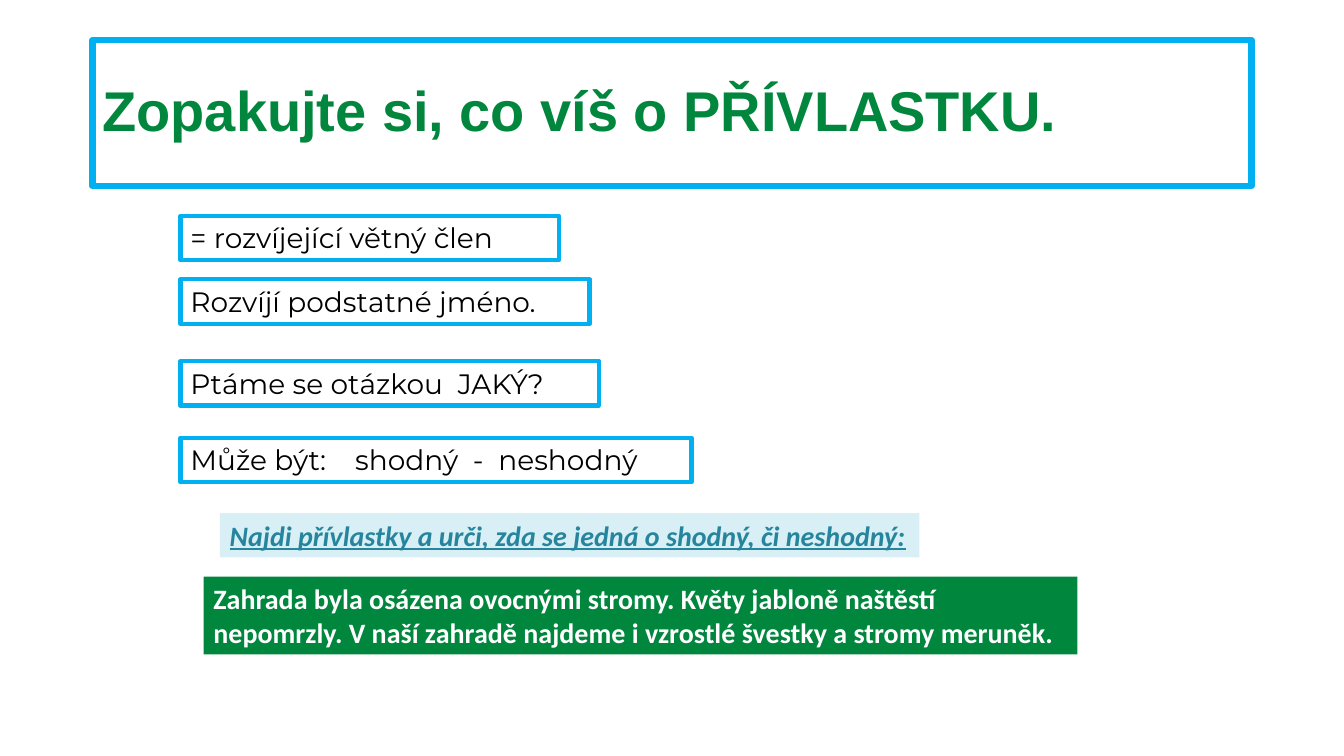
import pptx
import pptx.dml.color
import pptx.enum.text
import pptx.oxml
import pptx.oxml.ns
import pptx.util

Cm = pptx.util.Cm
Pt = pptx.util.Pt
SKY, GREEN, WHITE, BLACK = "00B0F0", "00863D", "FFFFFF", "000000"
PALE, TEAL = "D7EFF5", "26859D"


def tint(hue):
    return pptx.dml.color.RGBColor.from_string(hue)


def frame(shape, width):
    shape.line.color.rgb = tint(SKY)
    shape.line.width = Pt(width)


def style(para, face, size, hue, bold=False, slant=False):
    """Format every run; slanted text is underlined too."""
    for run in para.runs:
        font = run.font
        font.name, font.size, font.bold = face, Pt(size), bold
        font.color.rgb = tint(hue)
        if slant:
            font.italic = font.underline = True


def set_tab(para, place):
    """Add one left tab stop at the given distance."""
    props = para._p.get_or_add_pPr()
    stops = pptx.oxml.parse_xml(f"<a:tabLst {pptx.oxml.ns.nsdecls('a')}/>")
    stop = stops.makeelement(pptx.oxml.ns.qn("a:tab"), {"pos": str(int(place)), "algn": "l"})
    stops.append(stop)
    props.append(stops)


def add_title(slide, left, top, width, height):
    title = slide.shapes.title
    title.left, title.top, title.width, title.height = left, top, width, height
    frame(title, 4.5)
    text = title.text_frame
    text.text = "Zopakujte si, co víš o PŘÍVLASTKU."
    text.vertical_anchor = pptx.enum.text.MSO_ANCHOR.MIDDLE
    para = text.paragraphs[0]
    para.alignment = pptx.enum.text.PP_ALIGN.LEFT
    para.line_spacing = 0.9
    style(para, "Arial", 40, GREEN, bold=True)


def add_box(slide, words, left, top, width, height, wrap=False):
    box = slide.shapes.add_textbox(left, top, width, height)
    text = box.text_frame
    text.text = words
    text.word_wrap = wrap
    text.auto_size = pptx.enum.text.MSO_AUTO_SIZE.SHAPE_TO_FIT_TEXT
    return box, text.paragraphs[0]


def add_facts(slide, left, top, height):
    facts = [
        ("= rozvíjející větný člen", 0, 9.53),
        ("Rozvíjí podstatné jméno.", 1.6, 10.31),
        ("Ptáme se otázkou  JAKÝ?", 3.66, 10.54),
        ("Může být:\tshodný  -  neshodný", 5.59, 12.88),
    ]
    for words, drop, width in facts:
        box, para = add_box(slide, words, left, top + Cm(drop), Cm(width), height)
        frame(box, 3)
        style(para, "Montserrat", 20, BLACK)
        if "\t" in words:
            set_tab(para, Cm(4.15))


def add_task(slide, left, top):
    """Place the instruction and, below it, the sentences to work on."""
    head, para = add_box(slide, "Najdi přívlastky a urči, zda se jedná o shodný, či neshodný:",
                         left + Cm(0.41), top, Cm(17.63), Cm(1.12))
    head.fill.solid()
    head.fill.fore_color.rgb = tint(PALE)
    style(para, "Calibri", 20, TEAL, bold=True, slant=True)

    body, para = add_box(slide, "Zahrada byla osázena ovocnými stromy. Květy jabloně naštěstí "
                         "nepomrzly. V naší zahradě najdeme i vzrostlé švestky a stromy meruněk.",
                         left, top + Cm(1.6), Cm(22.02), Cm(1.96), wrap=True)
    body.fill.solid()
    body.fill.fore_color.rgb = tint(GREEN)
    style(para, "Calibri", 20, WHITE, bold=True)


def main():
    deck = pptx.Presentation()
    deck.slide_width, deck.slide_height = Cm(33.87), Cm(19.05)
    slide = deck.slides.add_slide(deck.slide_layouts[5])
    add_title(slide, Cm(2.33), Cm(1.01), Cm(29.21), Cm(3.68))
    add_facts(slide, Cm(4.55), Cm(5.44), Cm(1.12))
    add_task(slide, Cm(5.13), Cm(12.93))
    deck.save("out.pptx")


if __name__ == "__main__":
    main()
